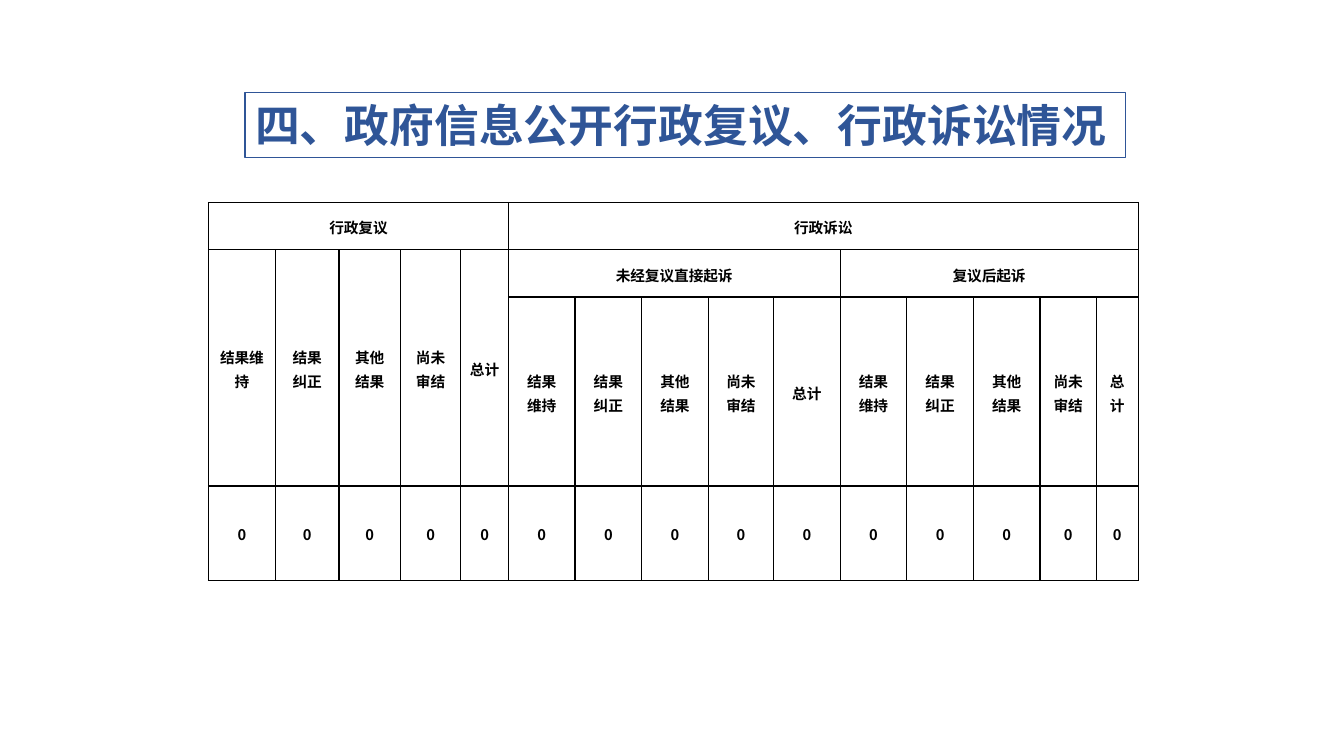
from dataclasses import dataclass

from lxml import etree
from pptx import Presentation
from pptx.dml.color import RGBColor
from pptx.enum.text import MSO_ANCHOR, MSO_AUTO_SIZE, PP_ALIGN
from pptx.oxml.ns import qn
from pptx.util import Pt

MIDDLE = MSO_ANCHOR.MIDDLE
LEFT, CENTER = PP_ALIGN.LEFT, PP_ALIGN.CENTER
FIXED_SIZE = MSO_AUTO_SIZE.NONE


@dataclass(frozen=True)
class Theme:
    blue: RGBColor = RGBColor(0x2F, 0x55, 0x97)
    black: RGBColor = RGBColor(0, 0, 0)
    title_size: float = 32
    table_size: float = 10.5
    sans: str = "Noto Sans CJK SC"
    serif: str = "Times New Roman"


THEME = Theme()


def format_runs(paragraph, size, color, latin):
    """Make the runs bold, with the sans face for Chinese characters."""
    for run in paragraph.runs:
        font_format = {"name": latin, "size": Pt(size), "bold": True}
        for attribute, value in font_format.items():
            setattr(run.font, attribute, value)
        run.font.color.rgb = color
        east_asian = etree.Element(qn("a:ea"), typeface=THEME.sans)
        run.font._element.find(qn("a:latin")).addnext(east_asian)


def add_borders(cell):
    properties = cell._tc.get_or_add_tcPr()
    for side in ("lnL", "lnR", "lnT", "lnB"):
        border = etree.SubElement(properties, qn(f"a:{side}"), w=str(Pt(1)))
        fill = etree.SubElement(border, qn("a:solidFill"))
        etree.SubElement(fill, qn("a:srgbClr"), val=str(THEME.black))


presentation = Presentation()
presentation.slide_width = Pt(960)
presentation.slide_height = Pt(540)
slide = presentation.slides.add_slide(presentation.slide_layouts[5])

# Heading
heading = slide.shapes.title
heading_box = {"left": 175, "top": 66.2, "width": 629.3, "height": 46.1}
for attribute, value in heading_box.items():
    setattr(heading, attribute, Pt(value))
heading.line.color.rgb = THEME.blue
heading.line.width = Pt(0.75)
heading_frame = heading.text_frame
heading_frame.text = "四、政府信息公开行政复议、行政诉讼情况"
heading_frame.auto_size = FIXED_SIZE
heading_frame.vertical_anchor = MIDDLE
heading_frame.paragraphs[0].alignment = LEFT
format_runs(heading_frame.paragraphs[0], THEME.title_size, THEME.blue, THEME.sans)

# Cases by outcome: \n starts a paragraph, \v breaks a line
OUTCOMES = ["结果\v维持", "结果\v纠正", "其他\v结果", "尚未\v审结", "总计"]
REVIEW_OUTCOMES = ["结果维持", "结果\n纠正", *OUTCOMES[2:]]
COLUMN_WIDTHS = [47.7, 45.5, 43.8, 43.2, 34,
                 47.6, 47.6, 47.6, 46.6, 47.6,
                 47.6, 47.6, 47.6, 40.3, 29.8]
ROW_HEIGHTS = [33.75, 33.75, 135, 67.5]
GROUP = len(OUTCOMES)

cases = slide.shapes.add_table(
    len(ROW_HEIGHTS), len(COLUMN_WIDTHS), Pt(149), Pt(144.7),
    Pt(sum(COLUMN_WIDTHS)), Pt(sum(ROW_HEIGHTS))).table
cases.first_row = cases.horz_banding = False
for column, width in zip(cases.columns, COLUMN_WIDTHS):
    column.width = Pt(width)
for row, height in zip(cases.rows, ROW_HEIGHTS):
    row.height = Pt(height)

# Each entry: row, column, last row, last column, wording
entries = [
    (0, 0, 0, GROUP - 1, "行政复议"),
    (0, GROUP, 0, 3 * GROUP - 1, "行政诉讼"),
    (1, GROUP, 1, 2 * GROUP - 1, "未经复议直接起诉"),
    (1, 2 * GROUP, 1, 3 * GROUP - 1, "复议后起诉"),
]
entries += [(1, c, 2, c, outcome) for c, outcome in enumerate(REVIEW_OUTCOMES)]
entries += [(2, c, 2, c, outcome) for c, outcome in enumerate(OUTCOMES * 2, GROUP)]
entries += [(3, c, 3, c, "0") for c in range(3 * GROUP)]

CELL_FORMAT = {"margin_left": Pt(5), "margin_right": Pt(5), "margin_top": 0,
               "margin_bottom": 0, "vertical_anchor": MIDDLE}
for cell in cases.iter_cells():
    for attribute, value in CELL_FORMAT.items():
        setattr(cell, attribute, value)
    add_borders(cell)
    cell.fill.background()

for top, left, bottom, right, wording in entries:
    cell = cases.cell(top, left)
    if (top, left) != (bottom, right):
        cell.merge(cases.cell(bottom, right))
    cell.text = wording
    latin = THEME.sans if wording == "0" else THEME.serif
    for paragraph in cell.text_frame.paragraphs:
        paragraph.alignment = CENTER
        paragraph.line_spacing = Pt(17)
        format_runs(paragraph, THEME.table_size, THEME.black, latin)

presentation.save("out.pptx")
